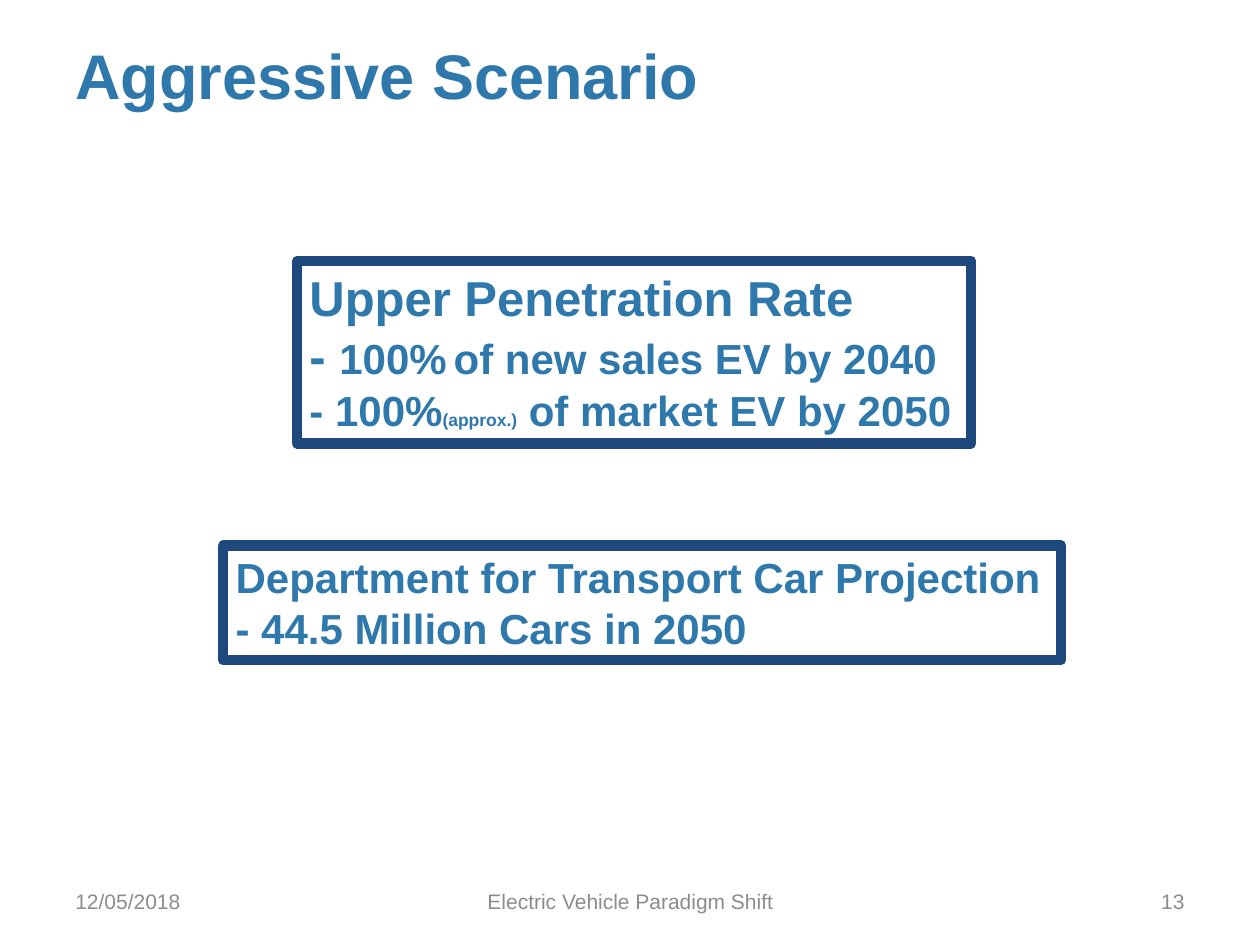
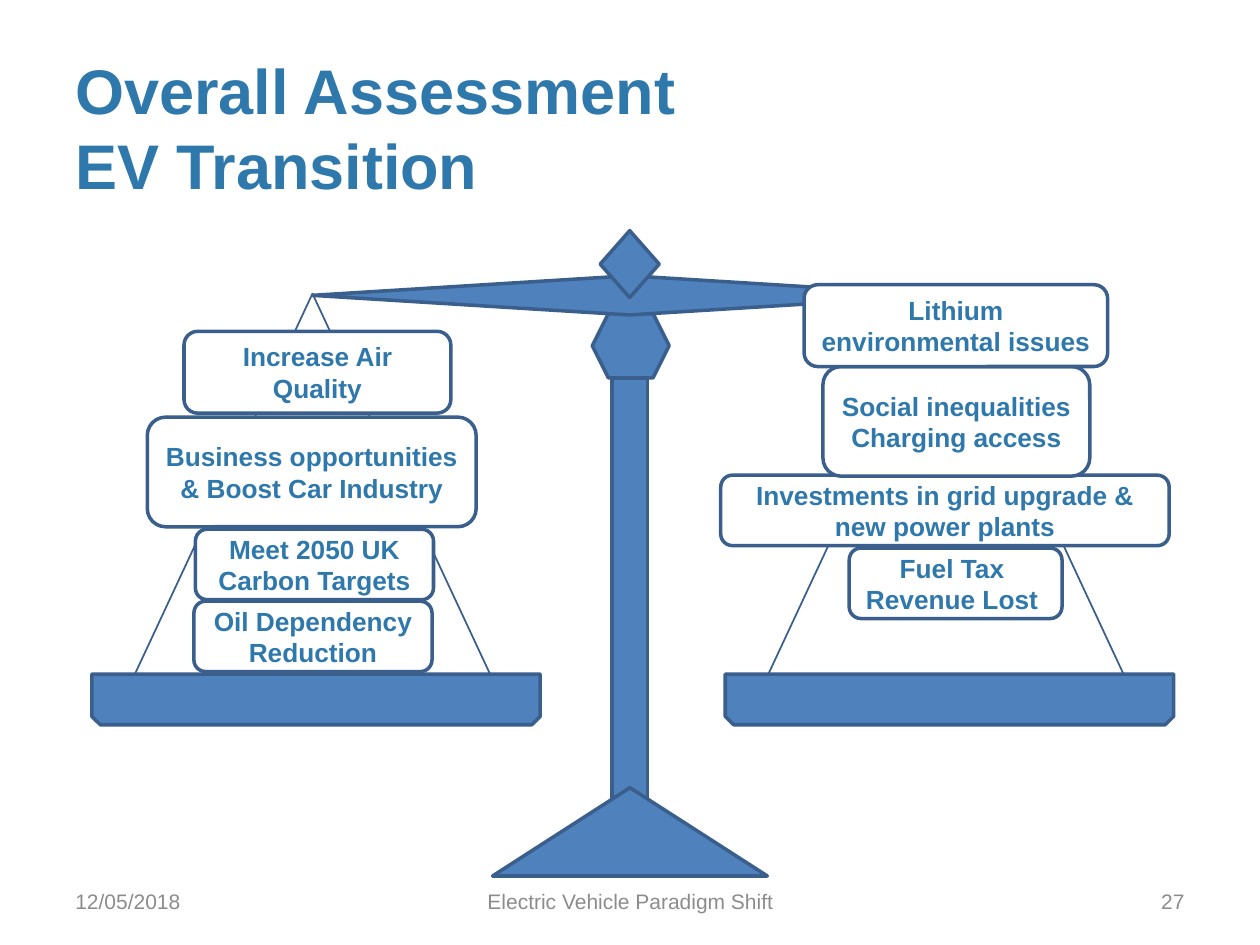
from pptx import Presentation
from pptx import util as u
from pptx.dml.color import RGBColor
from pptx.enum import shapes, text

TITLE_BLUE = RGBColor(0x2F, 0x78, 0xAC)
NAVY = RGBColor(0x1F, 0x49, 0x7D)
SCALE_BLUE = RGBColor(0x4F, 0x81, 0xBD)
OUTLINE_BLUE = RGBColor(0x3A, 0x5F, 0x8C)
FOOTER_GREY = RGBColor(0x8C, 0x8C, 0x8C)
WHITE = RGBColor(0xFF, 0xFF, 0xFF)

KIND = shapes.MSO_SHAPE
ALIGN = text.PP_ALIGN
ANCHOR = text.MSO_ANCHOR


class Deck:
    """Holds the shared style and the slide being built."""

    bold_blue = {"name": "Arial", "bold": True, "color": TITLE_BLUE}
    footer_grey = {"name": "Arial", "size": 12, "color": FOOTER_GREY}

    def __init__(self):
        self.presentation = Presentation()
        self.presentation.slide_width = u.Cm(25.4)
        self.presentation.slide_height = u.Cm(19.05)
        self.slide = None

    def new_slide(self, title, title_top, number):
        layout = self.presentation.slide_layouts[6]
        self.slide = self.presentation.slides.add_slide(layout)
        self.textbox((1.27, title_top, 20, 2), title, {**self.bold_blue, "size": 36})
        footers = (
            ((1.27, 5.92), "12/05/2018", ALIGN.LEFT),
            ((8.69, 8.04), "Electric Vehicle Paradigm Shift", ALIGN.CENTER),
            ((18.21, 5.92), number, ALIGN.RIGHT),
        )
        for (left, width), line, align in footers:
            self.textbox((left, 17.65, width, 1.02), [line], self.footer_grey,
                         align, ANCHOR.MIDDLE)

    def style_run(self, run, style):
        for key, value in style.items():
            if key == "color":
                run.font.color.rgb = value
            else:
                setattr(run.font, key, u.Pt(value) if key == "size" else value)

    def fill_text(self, frame, lines, style, align, frame_format):
        """Each line is a string or a list of (text, size) runs."""
        for key, value in frame_format.items():
            setattr(frame, key, value)
        for index, line in enumerate(lines):
            paragraph = frame.add_paragraph() if index else frame.paragraphs[0]
            paragraph.alignment = align
            runs = [(line, style["size"])] if isinstance(line, str) else line
            for words, size in runs:
                run = paragraph.add_run()
                run.text = words
                self.style_run(run, {**style, "size": size})

    def textbox(self, place, lines, style, align=ALIGN.LEFT, anchor=ANCHOR.TOP):
        box = self.slide.shapes.add_textbox(*map(u.Cm, place))
        self.fill_text(box.text_frame, lines, style, align,
                       {"word_wrap": True, "vertical_anchor": anchor})

    def shape(self, kind, place, fill=SCALE_BLUE, line=OUTLINE_BLUE, weight=2, rotation=0):
        shape = self.slide.shapes.add_shape(kind, *map(u.Cm, place))
        shape.shadow.inherit = False
        shape.rotation = rotation
        shape.fill.solid()
        shape.fill.fore_color.rgb = fill
        shape.line.color.rgb = line
        shape.line.width = u.Pt(weight)
        return shape

    def framed_note(self, place, lines):
        shape = self.shape(KIND.RECTANGLE, place, WHITE, NAVY, 6)
        self.fill_text(shape.text_frame, lines, {**self.bold_blue, "size": 24}, ALIGN.LEFT,
                       {"word_wrap": False, "vertical_anchor": ANCHOR.TOP,
                        "auto_size": text.MSO_AUTO_SIZE.SHAPE_TO_FIT_TEXT})

    def weight(self, place, lines):
        shape = self.shape(KIND.ROUNDED_RECTANGLE, place, WHITE)
        self.fill_text(shape.text_frame, lines, {**self.bold_blue, "size": 15}, ALIGN.CENTER,
                       {"word_wrap": True, "vertical_anchor": ANCHOR.MIDDLE,
                        "margin_left": u.Cm(0.2), "margin_right": u.Cm(0.2)})

    def scale_pan(self, left):
        self.shape(KIND.ISOSCELES_TRIANGLE, (left + 0.87, 5.92, 7.16, 7.67), WHITE, weight=1)
        self.shape(KIND.SNIP_2_SAME_RECTANGLE, (left, 13.59, 9.04, 1.02), rotation=180)


def scenario_slide(deck):
    deck.new_slide(["Aggressive Scenario"], 0.61, "13")
    deck.framed_note((4.5, 11, 16.89, 2.31), [
        "Department for Transport Car Projection",
        "- 44.5 Million Cars in 2050",
    ])
    deck.framed_note((5.99, 5.26, 13.59, 3.68), [
        [("Upper Penetration Rate", 28)],
        [("- ", 28), ("100%", 24), (" ", 14), ("of new sales EV by 2040", 24)],
        [("- 100%", 24), ("(approx.)", 10), (" of market EV by 2050", 24)],
    ])


def assessment_slide(deck):
    deck.new_slide(["Overall Assessment", "EV Transition"], 0.91, "27")

    # Balance: pans, post, foot, joint, beam and finial
    for left in (1.85, 14.62):
        deck.scale_pan(left)
    for kind, place in (
        (KIND.RECTANGLE, (12.34, 7.62, 0.71, 8.69)),
        (KIND.ISOSCELES_TRIANGLE, (9.93, 15.88, 5.54, 1.78)),
        (KIND.HEXAGON, (11.94, 6.32, 1.55, 1.3)),
        (KIND.DIAMOND, (6.3, 5.56, 12.78, 0.79)),
        (KIND.DIAMOND, (12.1, 4.65, 1.19, 1.35)),
    ):
        deck.shape(kind, place)

    # Drawbacks on the right pan, then benefits on the left, bottom up
    for place, lines in (
        ((17.12, 11.05, 4.29, 1.42), ["Fuel Tax ", "Revenue Lost "]),
        ((14.53, 9.58, 9.04, 1.42), ["Investments in grid upgrade & new power plants"]),
        ((16.59, 7.39, 5.38, 2.21), ["Social inequalities Charging access"]),
        ((16.21, 5.74, 6.12, 1.65), ["Lithium environmental issues"]),
        ((3.91, 12.12, 4.8, 1.42), ["Oil Dependency Reduction"]),
        ((3.94, 10.67, 4.8, 1.42), ["Meet 2050 UK", "Carbon Targets"]),
        ((2.97, 8.41, 6.63, 2.21), ["Business opportunities & Boost Car Industry"]),
        ((3.71, 6.68, 5.38, 1.65), ["Increase Air Quality"]),
    ):
        deck.weight(place, lines)


def main():
    deck = Deck()
    scenario_slide(deck)
    assessment_slide(deck)
    deck.presentation.save("out.pptx")


if __name__ == "__main__":
    main()
